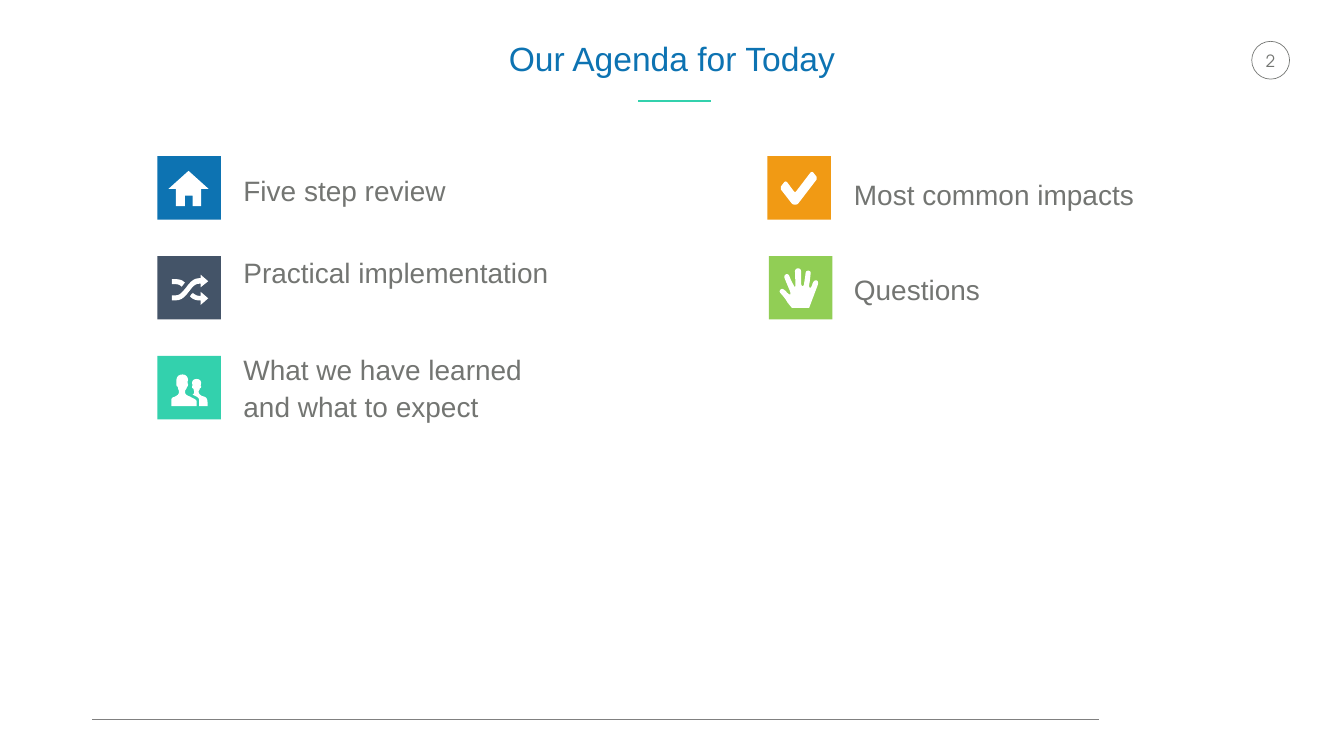
from lxml import etree
from pptx import Presentation
from pptx.dml.color import RGBColor
from pptx.enum.shapes import MSO_CONNECTOR as Connector, MSO_SHAPE as Preset
from pptx.enum.text import MSO_ANCHOR as Anchor, MSO_AUTO_SIZE as AutoSize, PP_ALIGN as Align
from pptx.oxml.ns import qn
from pptx.util import Inches, Pt

BLUE, SLATE, TEAL, ORANGE, GREEN = "0D73B2", "445468", "33D1AD", "F19A14", "91CE55"
GREY, RULE_GREY, WHITE = "737572", "808080", "FFFFFF"
TILE_SIZE, FIRST_ROW, ROW_STEP = 1.26, 3.1, 1.98
CURVE_STEPS = 6

HOME = [[(87, 65), (102, 65), (62, 29), (22, 65), (37, 65), (37, 99),
         (55, 99), (55, 78), (70, 78), (70, 99), (87, 99)]]
SHUFFLE = [
    [(83, 55), (86, 55), (86, 62), (101, 50), (86, 37), (86, 44), (83, 44),
     (70, 44, 63, 55, 56, 64), (50, 71, 45, 78, 37, 78), (29, 78), (29, 88), (37, 88),
     (50, 88, 57, 78, 64, 69), (70, 61, 75, 55, 83, 55)],
    [(48, 61), (48, 60, 50, 60, 50, 59), (51, 57, 53, 55, 55, 53), (50, 48, 45, 46, 37, 46),
     (29, 46), (29, 56), (37, 56), (41, 56, 45, 57, 48, 61)],
    [(86, 79), (83, 79), (78, 79, 74, 76, 70, 73), (70, 74), (68, 75, 66, 78, 65, 80),
     (69, 85, 75, 88, 83, 88), (86, 88), (86, 97), (101, 84), (86, 71)],
]
PEOPLE = [
    [(100, 100), (100, 100, 100, 86, 98, 85), (97, 83, 95, 81, 89, 80),
     (84, 77, 82, 75, 82, 71), (82, 68, 84, 69, 84, 66), (84, 63, 87, 66, 87, 60),
     (86, 59), (87, 54), (87, 52, 86, 46, 78, 46), (70, 46, 69, 52, 69, 54), (70, 59),
     (69, 60), (69, 66, 70, 63, 72, 66), (72, 69, 73, 68, 73, 71),
     (73, 73, 73, 76, 70, 77), (82, 83, 83, 83, 83, 90), (83, 100)],
    [(65, 81), (57, 78, 55, 76, 55, 71), (55, 67, 57, 68, 59, 62), (59, 60, 61, 62, 61, 57),
     (60, 54), (60, 54, 60, 50, 61, 48), (61, 45, 59, 37, 50, 37), (40, 37, 38, 45, 38, 48),
     (38, 57), (38, 62, 40, 60, 41, 62), (41, 68, 43, 67, 43, 71), (43, 76, 41, 78, 35, 81),
     (32, 82, 28, 83, 28, 87), (28, 100), (78, 100), (78, 90), (78, 87, 72, 85, 65, 81)],
]
CHECK = [[(53, 96), (50, 95), (48, 93), (27, 66), (27, 60), (34, 51), (36, 50), (39, 51),
          (53, 70), (55, 71), (57, 70), (86, 32), (89, 31), (91, 32), (98, 41), (98, 46),
          (62, 93), (60, 95), (57, 96)]]
HAND = [[(46, 103), (80, 103), (97, 58), (101, 47, 91, 44, 87, 54), (85, 62, 83, 63, 83, 63),
         (83, 63, 79, 63, 80, 58), (81, 53, 82, 46, 83, 35), (85, 28, 74, 27, 73, 33),
         (73, 38, 70, 53, 70, 56), (69, 60, 65, 63, 64, 54), (64, 30),
         (64, 22, 52, 23, 52, 30), (52, 35, 53, 54, 53, 58), (53, 61, 51, 63, 49, 57),
         (46, 52, 43, 46, 41, 40), (38, 32, 29, 37, 31, 43), (33, 48, 37, 58, 41, 67),
         (43, 71, 45, 80, 39, 75), (35, 72, 34, 69, 29, 66), (25, 63, 20, 69, 22, 72),
         (26, 77, 33, 84, 37, 92), (41, 97, 46, 103, 46, 103)]]

AGENDA = [
    (0, 3.12, BLUE, HOME, "Five step review", (4.73, 3.32, 6.77, 0.78)),
    (1, 3.12, SLATE, SHUFFLE, "Practical implementation", (4.73, 4.96, 6.37, 1.52)),
    (2, 3.12, TEAL, PEOPLE, "What we have learned and what to expect", (4.73, 6.88, 6.37, 1.52)),
    (0, 15.22, ORANGE, CHECK, "Most common impacts", (16.84, 3.41, 6.37, 0.78)),
    (1, 15.25, GREEN, HAND, "Questions", (16.84, 5.3, 6.37, 0.78)),
]


def color(hex_value):
    """Turn a hex string into a colour."""
    return RGBColor.from_string(hex_value)


def flatten(outline):
    """Return the outline's points with each cubic curve sampled evenly."""
    points = [outline[0]]
    for segment in outline[1:]:
        if len(segment) == 2:
            points.append(segment)
            continue
        start, first, second, end = points[-1], segment[:2], segment[2:4], segment[4:]
        for step in range(1, CURVE_STEPS + 1):
            t = step / CURVE_STEPS
            u = 1 - t
            points.append(tuple(
                u**3 * a + 3 * u * u * t * b + 3 * u * t * t * c + t**3 * d
                for a, b, c, d in zip(start, first, second, end)))
    return points


class AgendaSlide:
    """Hold the style and the current slide."""

    font = "Arial"

    def __init__(self, deck):
        """Add a slide with only a title."""
        self.slide = deck.slides.add_slide(deck.slide_layouts[5])
        self.shapes = self.slide.shapes

    def set_text(self, holder, text, size, ink, align=Align.LEFT, spacing=1.0, wrap=True, font=None):
        """Put one styled paragraph into a text holder."""
        frame = holder.text_frame
        frame.text = text
        frame.word_wrap = wrap
        frame.auto_size = AutoSize.SHAPE_TO_FIT_TEXT
        frame.vertical_anchor = Anchor.TOP
        paragraph = frame.paragraphs[0]
        paragraph.alignment = align
        paragraph.line_spacing = spacing
        style = paragraph.runs[0].font
        style.name, style.size = font or self.font, Pt(size)
        style.color.rgb = color(ink)

    def title(self, text, box):
        """Place and fill the title placeholder."""
        heading = self.shapes.title
        heading.left, heading.top, heading.width, heading.height = map(Inches, box)
        self.set_text(heading, text, 48, BLUE, Align.CENTER, 0.9, wrap=False)

    def label(self, text, box):
        """Add an agenda label."""
        self.set_text(self.shapes.add_textbox(*map(Inches, box)), text, 40, GREY, spacing=1.1)

    def rule(self, left, right, y, ink, weight):
        """Draw a horizontal line."""
        line = self.shapes.add_connector(
            Connector.STRAIGHT, Inches(left), Inches(y), Inches(right), Inches(y))
        line.line.color.rgb = color(ink)
        line.line.width = Pt(weight)
        etree.SubElement(line._element.spPr, qn("a:effectLst"))

    def fill(self, shape, paint):
        """Give a shape a flat fill without line or shadow."""
        shape.shadow.inherit = False
        shape.fill.solid()
        shape.fill.fore_color.rgb = color(paint)
        shape.line.fill.background()

    def tile(self, left, top, paint):
        """Add a coloured square."""
        side = Inches(TILE_SIZE)
        self.fill(self.shapes.add_shape(Preset.RECTANGLE, Inches(left), Inches(top), side, side), paint)

    def icon(self, left, top, outlines):
        """Draw white outlines given in hundredths of an inch from the tile corner."""
        builder = None
        for outline in outlines:
            start, *rest = [(Inches(left + x / 100), Inches(top + y / 100))
                            for x, y in flatten(outline)]
            if builder is None:
                builder = self.shapes.build_freeform(*start, scale=1.0)
            else:
                builder.move_to(*start)
            builder.add_line_segments(rest, close=True)
        self.fill(builder.convert_to_shape(), WHITE)

    def page_number(self, number):
        """Add the page number and its ring."""
        digit = self.shapes.add_textbox(Inches(24.8), Inches(0.9), Inches(0.81), Inches(0.61))
        frame = digit.text_frame
        frame.margin_left = frame.margin_right = Inches(0.2)
        frame.margin_top = frame.margin_bottom = Inches(0.1)
        self.set_text(digit, number, 24, GREY, Align.CENTER, wrap=False, font="TeX Gyre Adventor")
        ring = self.shapes.add_shape(
            Preset.OVAL, Inches(24.83), Inches(0.82), Inches(0.75), Inches(0.75))
        ring.shadow.inherit = False
        ring.fill.background()
        ring.line.color.rgb = color(GREY)
        ring.line.width = Pt(1)


def main():
    """Build the agenda slide and save it."""
    deck = Presentation()
    deck.slide_width, deck.slide_height = Inches(26.66), Inches(15)
    agenda = AgendaSlide(deck)
    agenda.rule(1.83, 21.8, 14.28, RULE_GREY, 1)
    agenda.page_number("2")
    agenda.title("Our Agenda for Today", (9.56, 0.79, 7.54, 0.83))
    agenda.rule(12.66, 14.1, 2, TEAL, 3)
    for row, left, paint, outlines, text, box in AGENDA:
        top = FIRST_ROW + row * ROW_STEP
        agenda.tile(left, top, paint)
        agenda.icon(left, top, outlines)
        agenda.label(text, box)
    deck.save("out.pptx")


if __name__ == "__main__":
    main()
